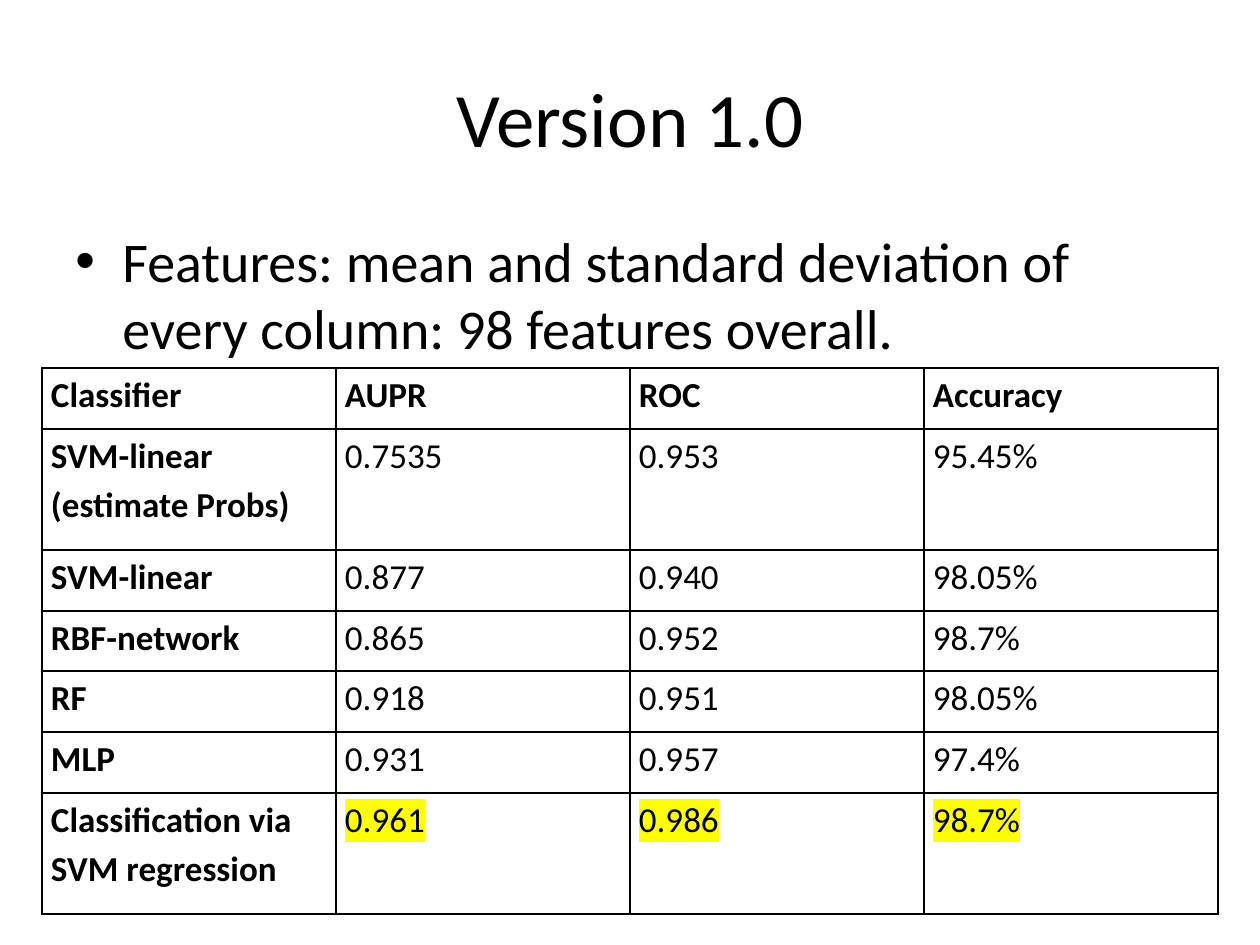
from typing import Any, NamedTuple

from lxml.etree import SubElement
from pptx import Presentation
from pptx.dml.color import RGBColor
from pptx.enum.text import MSO_ANCHOR, PP_ALIGN
from pptx.oxml import parse_xml
from pptx.oxml.ns import nsdecls, qn
from pptx.util import Emu, Pt

EMU_PER_PX = 914400 / 126
BLACK = RGBColor(0, 0, 0)
YELLOW = RGBColor(255, 255, 0)
FONT = "Calibri"


class Box(NamedTuple):
    left: int
    top: int
    width: int
    height: int


class Result(NamedTuple):
    classifier: str
    aupr: str
    roc: str
    accuracy: str


SLIDE = Box(0, 0, 1260, 945)
TITLE = Box(63, 38, 1134, 157)
BODY = Box(63, 220, 1134, 624)
TABLE = Box(42, 368, 1176, 546)
ROW_HEIGHTS = (61, 121, 61, 60, 61, 61, 121)
RESULTS = (
    Result("Classifier", "AUPR", "ROC", "Accuracy"),
    Result("SVM-linear (estimate Probs)", "0.7535", "0.953", "95.45%"),
    Result("SVM-linear", "0.877", "0.940", "98.05%"),
    Result("RBF-network", "0.865", "0.952", "98.7%"),
    Result("RF", "0.918", "0.951", "98.05%"),
    Result("MLP", "0.931", "0.957", "97.4%"),
    Result("Classification via SVM regression", "0.961", "0.986", "98.7%"),
)


def px(length: int) -> Emu:
    """Turn pixels into EMU."""
    return Emu(round(length * EMU_PER_PX))


def apply(target: Any, values: dict[str, Any]) -> None:
    """Set each attribute named in the format values."""
    for name, value in values.items():
        setattr(target, name, value)


def place(shape: Any, box: Box) -> None:
    """Move and size a shape."""
    apply(shape, {name: px(value) for name, value in box._asdict().items()})


def write(frame: Any, text: str, size: int, bold: bool, paragraph_format: dict[str, Any]) -> Any:
    """Write one formatted paragraph and return it."""
    frame.word_wrap = True
    paragraph = frame.paragraphs[0]
    apply(paragraph, paragraph_format)
    run = paragraph.add_run()
    run.text = text
    apply(run.font, {"name": FONT, "size": Pt(size), "bold": bold})
    run.font.color.rgb = BLACK
    return paragraph


def add_bullet(paragraph: Any, indent: Emu) -> None:
    """Give a paragraph a hanging round bullet."""
    properties = paragraph._p.get_or_add_pPr()
    properties.set("marL", str(indent))
    properties.set("indent", str(-indent))
    SubElement(properties, qn("a:buFont")).set("typeface", "Arial")
    SubElement(properties, qn("a:buChar")).set("char", "•")


def add_borders(cell: Any) -> None:
    """Draw a thin black line on every side of a cell."""
    properties = cell._tc.get_or_add_tcPr()
    for position, side in enumerate("LRTB"):
        line = parse_xml(
            f'<a:ln{side} {nsdecls("a")} w="{Pt(1)}"><a:solidFill>'
            f'<a:srgbClr val="{BLACK}"/></a:solidFill></a:ln{side}>'
        )
        properties.insert(position, line)


def highlight(paragraph: Any, color: RGBColor) -> None:
    """Mark the text of a paragraph with a background colour."""
    fill = paragraph.runs[0].font._element.find(qn("a:solidFill"))
    fill.addnext(parse_xml(
        f'<a:highlight {nsdecls("a")}><a:srgbClr val="{color}"/></a:highlight>'
    ))


def add_results(slide: Any) -> None:
    """Add the table of classifier results."""
    shape = slide.shapes.add_table(
        len(RESULTS), len(Result._fields), *(px(value) for value in TABLE)
    )
    table = shape.table
    apply(table, {"first_row": False, "horz_banding": False})
    for row, height in zip(table.rows, ROW_HEIGHTS):
        row.height = px(height)
    margins = {"margin_left": px(9), "margin_right": px(9), "margin_top": 0, "margin_bottom": 0}
    for row_index, result in enumerate(RESULTS):
        for column_index, text in enumerate(result):
            cell = table.cell(row_index, column_index)
            apply(cell, margins)
            cell.fill.background()
            add_borders(cell)
            bold = row_index == 0 or column_index == 0
            paragraph = write(cell.text_frame, text, 20, bold, {"line_spacing": 1.15})
            if result is RESULTS[-1] and not bold:
                highlight(paragraph, YELLOW)


def main() -> None:
    """Build and save the presentation."""
    presentation = Presentation()
    apply(presentation, {"slide_width": px(SLIDE.width), "slide_height": px(SLIDE.height)})
    slide = presentation.slides.add_slide(presentation.slide_layouts.get_by_name("Title Only"))
    title = slide.shapes.title
    place(title, TITLE)
    title.text_frame.vertical_anchor = MSO_ANCHOR.MIDDLE
    write(title.text_frame, "Version 1.0", 44, False, {"alignment": PP_ALIGN.CENTER})
    body = slide.shapes.add_textbox(*(px(value) for value in BODY))
    features = write(
        body.text_frame,
        "Features: mean and standard deviation of every column: 98 features overall.",
        32, False, {"space_before": Pt(6)},
    )
    add_bullet(features, px(47))
    add_results(slide)
    presentation.save("out.pptx")


if __name__ == "__main__":
    main()
